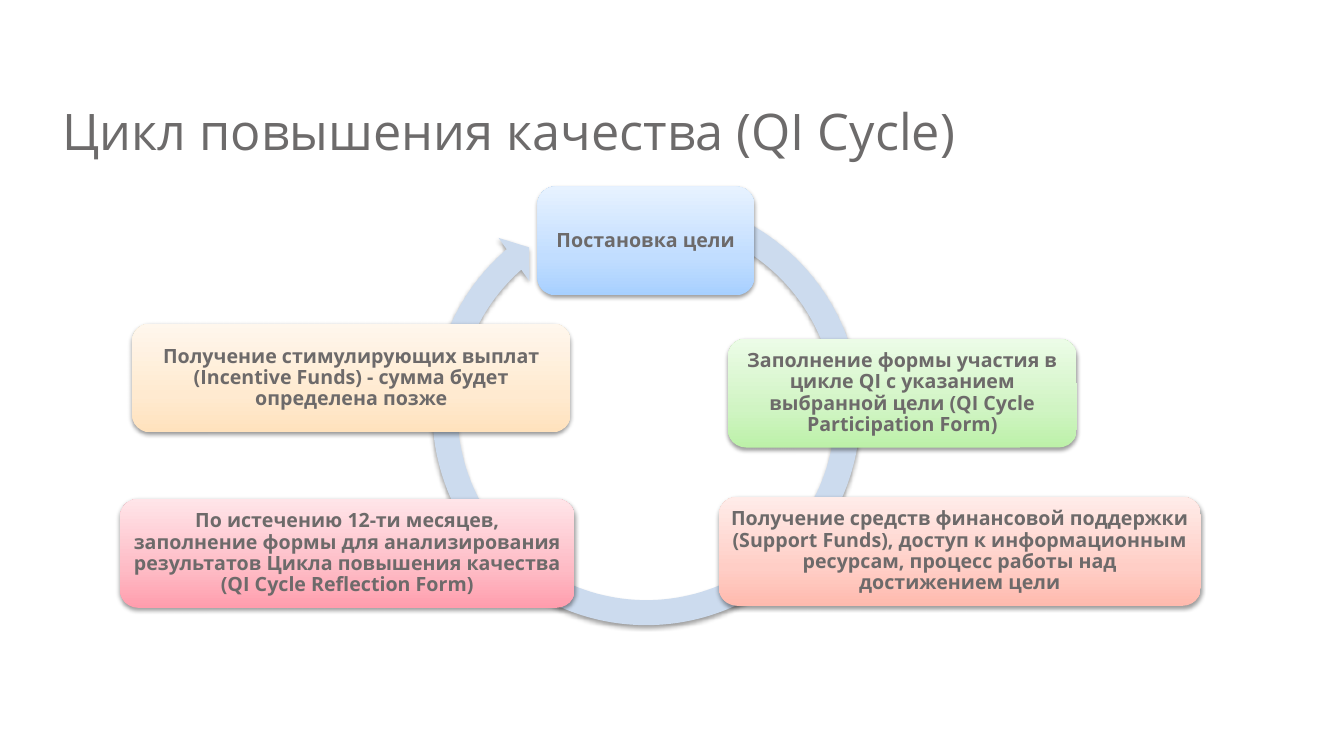
from lxml import etree
from copy import deepcopy
from pptx import Presentation
from pptx.dml.color import RGBColor
from pptx.enum.shapes import MSO_SHAPE as Shape
from pptx.enum.text import MSO_ANCHOR as Anchor, PP_ALIGN as Align
from pptx.oxml import parse_xml
from pptx.oxml.ns import nsdecls, qn
from pptx.util import Inches, Pt

FONT = "Open Sans"
COLORS = {"title": "6D6B6B", "label": "6D6A6A", "ring": "CCDBEE", "shadow": "000000"}
# Each gradient runs from the bottom of its box to the top.
GRADIENTS = {
    "blue": ("A7D0FF", "C1DDFF", "E7F2FF"),
    "green": ("BCF1A8", "D0F4C3", "ECFCE7"),
    "coral": ("FFBAAE", "FFCEC6", "FFECE9"),
    "pink": ("FF9DAD", "FEBBC5", "FFE5E9"),
    "orange": ("FFE2BD", "FFEAD0", "FFF7ED"),
}
STOPS = (0, 0.35, 1)
STEP_HEIGHT = 1.08
# Left, top and width in inches, gradient, wording
STEPS = [
    (5.33, 1.85, 2.15, "blue", "Постановка цели"),
    (7.22, 3.36, 3.46, "green",
     "Заполнение формы участия в цикле QI с указанием выбранной цели "
     "(QI Cycle Participation Form)"),
    (7.13, 4.93, 4.78, "coral",
     "Получение средств финансовой поддержки (Support Funds), доступ к "
     "информационным ресурсам, процесс работы над достижением цели"),
    (1.19, 4.95, 4.51, "pink",
     "По истечению 12-ти месяцев, заполнение формы для анализирования "
     "результатов Цикла повышения качества (QI Cycle Reflection Form)"),
    (1.31, 3.21, 4.35, "orange",
     "Получение стимулирующих выплат (Incentive Funds) - сумма будет "
     "определена позже"),
]


def write_text(shape, text, *, size, color, bold=False, align=Align.LEFT,
               anchor=Anchor.MIDDLE, spacing=1.0, insets=(0.1, 0.05)):
    frame = shape.text_frame
    frame.word_wrap = True
    frame.vertical_anchor = anchor
    frame.margin_left = frame.margin_right = Inches(insets[0])
    frame.margin_top = frame.margin_bottom = Inches(insets[1])
    para = frame.paragraphs[0]
    para.alignment = align
    para.line_spacing = spacing
    span = para.add_run()
    span.text = text
    span.font.name = FONT
    span.font.size = Pt(size)
    span.font.bold = bold
    span.font.color.rgb = RGBColor.from_string(color)


def add_soft_shape(page, kind, box):
    """Add a shape without outline that casts a soft shadow downwards."""
    shape = page.shapes.add_shape(kind, *map(Inches, box))
    shape.line.fill.background()
    shape.shadow.inherit = False
    effects = shape._element.spPr.find(qn("a:effectLst"))
    effects.append(parse_xml(
        f'<a:outerShdw {nsdecls("a")} blurRad="{Pt(3.1)}" dist="{Pt(1.6)}" '
        f'dir="5400000" rotWithShape="0"><a:srgbClr val="{COLORS["shadow"]}">'
        '<a:alpha val="38000"/></a:srgbClr></a:outerShdw>'))
    return shape


def fill_gradient(shape, colors):
    shape.fill.gradient()
    shape.fill.gradient_angle = 90
    stop_list = shape._element.spPr.find(".//" + qn("a:gsLst"))
    stop_list.append(deepcopy(stop_list[-1]))
    for stop, position, color in zip(shape.fill.gradient_stops, STOPS, colors):
        stop.position = position
        stop.color.rgb = RGBColor.from_string(color)


def add_title(page, box):
    title = page.shapes.add_textbox(*map(Inches, box))
    write_text(title, "Цикл повышения качества (QI Cycle)", size=36,
               color=COLORS["title"], anchor=Anchor.BOTTOM, spacing=2.44)


def add_ring(page, box):
    ring = add_soft_shape(page, Shape.CIRCULAR_ARROW, box)
    for index, value in enumerate((0.055, 3.307, 137.362, 174.102, 0.058)):
        ring.adjustments[index] = value
    ring.fill.solid()
    ring.fill.fore_color.rgb = RGBColor.from_string(COLORS["ring"])


def add_step(page, box, gradient, text):
    step = add_soft_shape(page, Shape.ROUNDED_RECTANGLE, box)
    fill_gradient(step, GRADIENTS[gradient])
    write_text(step, text, size=14, color=COLORS["label"], bold=True,
               align=Align.CENTER, spacing=0.9, insets=(0.06, 0.06))


def main():
    deck = Presentation()
    deck.slide_width, deck.slide_height = Inches(13.33), Inches(7.5)
    page = deck.slides.add_slide(deck.slide_layouts[6])
    add_title(page, (0.52, 0.19, 10.31, 1.45))
    add_ring(page, (4.15, 1.82, 4.52, 4.52))
    for left, top, width, gradient, text in STEPS:
        add_step(page, (left, top, width, STEP_HEIGHT), gradient, text)
    deck.save("out.pptx")


if __name__ == "__main__":
    main()
